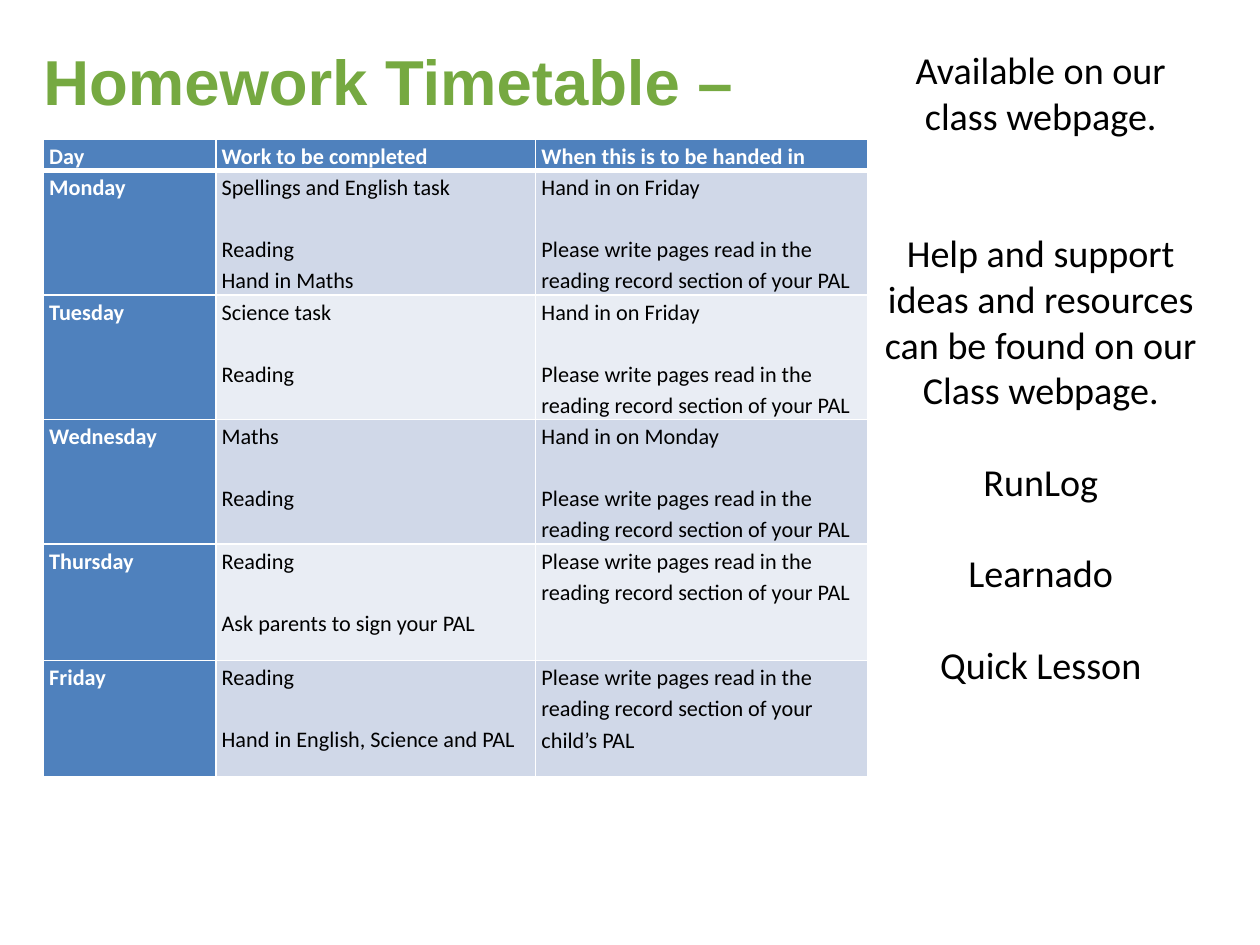
from dataclasses import dataclass

from lxml.etree import SubElement
from pptx import Presentation
from pptx.dml.color import RGBColor as RGB
from pptx.enum.text import MSO_ANCHOR as Anchor
from pptx.enum.text import MSO_AUTO_SIZE as AutoSize
from pptx.enum.text import PP_ALIGN as Align
from pptx.oxml import parse_xml
from pptx.oxml.ns import nsdecls, qn
from pptx.util import Pt

# Content: an indented tuple entry is (text, blank lines before it)
HEADING = "Homework Timetable –"
RECORD = "Please write pages read in the reading record section of your PAL"
CHILD_RECORD = RECORD.replace("your PAL", "your child’s PAL")
COLUMN_NAMES = ("Day", "Work to be completed", "When this is to be handed in")
DAYS = [
    ("Monday",
     [("Spellings and English task", 0), ("Reading", 1), ("Hand in Maths", 0)],
     [("Hand in on Friday", 0), (RECORD, 1)]),
    ("Tuesday",
     [("Science task", 0), ("Reading", 1)],
     [("Hand in on Friday", 0), (RECORD, 1)]),
    ("Wednesday",
     [("Maths", 0), ("Reading", 1)],
     [("Hand in on Monday", 0), (RECORD, 1)]),
    ("Thursday",
     [("Reading", 0), ("Ask parents to sign your PAL", 1)],
     [(RECORD, 0)]),
    ("Friday",
     [("Reading", 0), ("Hand in English, Science and PAL", 1)],
     [(CHILD_RECORD, 0)]),
]
SUPPORT = [
    ("Available on our", 0), ("class webpage.", 0),
    ("Help and support", 2), ("ideas and resources", 0),
    ("can be found on our", 0), ("Class webpage.", 0),
    ("RunLog", 1), ("Learnado", 1), ("Quick Lesson", 1),
]


@dataclass(frozen=True)
class Theme:
    heading_font: str = "Arial"
    text_font: str = "Calibri"
    heading_size: float = 40
    support_size: float = 24
    table_size: float = 14
    green: str = "76A941"
    blue: str = "4F81BD"
    bands: tuple = ("D0D8E8", "E9EDF4")
    white: str = "FFFFFF"
    black: str = "000000"


THEME = Theme()

# Layout, in points
SLIDE_SIZE = (794.16, 595.44)
HEADING_BOX = (27.4, 26.6, 739.4, 48.2)
TABLE_CORNER = (27.4, 87.8)
COLUMN_WIDTHS = (108.7, 201.6, 209.5)
ROW_HEIGHTS = (18.7, 78.5, 78.5, 78.5, 73.4, 73.4)
SUPPORT_BOX = (552, 29.5, 208, 450.7)
SUPPORT_LINE = 28.8
TABLE_LINE = 19.5


def write(frame, lines, *, size, color, font=THEME.text_font, bold=False,
          align=Align.LEFT, spacing=1.0, blank=0):
    """Fill a text frame with (text, blank lines before) pairs."""
    frame.word_wrap = True
    for i, (text, gap) in enumerate(lines):
        paragraph = frame.paragraphs[0] if i == 0 else frame.add_paragraph()
        properties = paragraph._p.get_or_add_pPr()
        properties.set("marL", "0")
        properties.set("indent", "0")
        SubElement(properties, qn("a:buNone"))
        paragraph.alignment = align
        paragraph.line_spacing = spacing
        paragraph.space_before = Pt(gap * blank)
        run = paragraph.add_run()
        run.text = text
        run.font.name = font
        run.font.size = Pt(size)
        run.font.bold = bold
        run.font.color.rgb = RGB.from_string(color)


def place(holder, box):
    holder.left, holder.top, holder.width, holder.height = map(Pt, box)
    frame = holder.text_frame
    frame.margin_left = frame.margin_right = 0
    frame.margin_top = frame.margin_bottom = 0
    frame.vertical_anchor = Anchor.TOP
    frame.auto_size = AutoSize.NONE
    return frame


def add_borders(cell, widths):
    properties = cell._tc.get_or_add_tcPr()
    for i, (side, width) in enumerate(widths.items()):
        properties.insert(i, parse_xml(
            f'<a:ln{side} {nsdecls("a")} w="{Pt(width)}"><a:solidFill>'
            f'<a:srgbClr val="{THEME.white}"/></a:solidFill></a:ln{side}>'))


def fill_cell(cell, lines, row, column):
    labelled = row == 0 or column == 0
    cell.margin_left = cell.margin_right = Pt(3.6)
    cell.margin_top = cell.margin_bottom = 0
    cell.fill.solid()
    cell.fill.fore_color.rgb = RGB.from_string(
        THEME.blue if labelled else THEME.bands[(row - 1) % 2])
    add_borders(cell, {"L": 1, "R": 1, "T": 3 if row == 1 else 1,
                       "B": 3 if row == 0 else 1})
    write(cell.text_frame, lines, size=THEME.table_size, bold=labelled,
          color=THEME.white if labelled else THEME.black,
          spacing=1.15, blank=TABLE_LINE)


def add_timetable(slide):
    rows = [[[(name, 0)] for name in COLUMN_NAMES]]
    rows += [[[(day, 0)], work, due] for day, work, due in DAYS]
    timetable = slide.shapes.add_table(
        len(rows), len(COLUMN_NAMES), *map(Pt, TABLE_CORNER),
        Pt(sum(COLUMN_WIDTHS)), Pt(sum(ROW_HEIGHTS))).table
    for column, width in zip(timetable.columns, COLUMN_WIDTHS):
        column.width = Pt(width)
    for row, height in zip(timetable.rows, ROW_HEIGHTS):
        row.height = Pt(height)
    for r, entries in enumerate(rows):
        for c, lines in enumerate(entries):
            fill_cell(timetable.cell(r, c), lines, r, c)


def main():
    deck = Presentation()
    deck.slide_width, deck.slide_height = map(Pt, SLIDE_SIZE)
    slide = deck.slides.add_slide(deck.slide_layouts[1])

    # Heading
    write(place(slide.shapes.title, HEADING_BOX), [(HEADING, 0)],
          size=THEME.heading_size, color=THEME.green,
          font=THEME.heading_font, bold=True)

    # Timetable
    add_timetable(slide)

    # Support column
    write(place(slide.placeholders[1], SUPPORT_BOX), SUPPORT,
          size=THEME.support_size, color=THEME.black, align=Align.CENTER,
          spacing=Pt(SUPPORT_LINE), blank=SUPPORT_LINE)

    deck.save("out.pptx")


if __name__ == "__main__":
    main()
